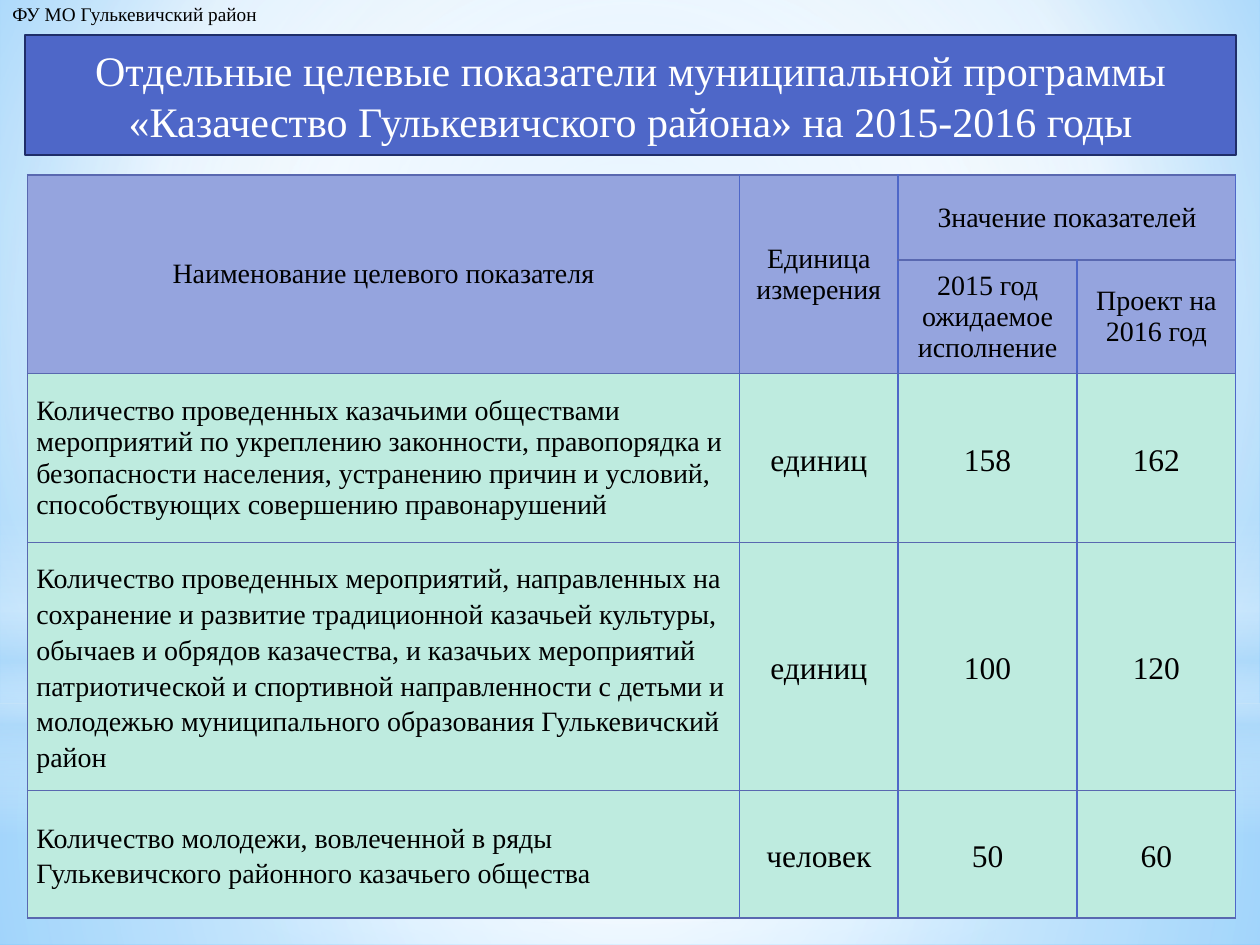
"""Build a slide with a table of target indicators of a municipal programme."""
from lxml.etree import SubElement
from pptx import Presentation
from pptx.dml.color import RGBColor
from pptx.enum.shapes import MSO_SHAPE
from pptx.enum.text import MSO_ANCHOR, MSO_AUTO_SIZE, PP_ALIGN
from pptx.oxml import parse_xml
from pptx.oxml.ns import nsdecls, qn
from pptx.util import Pt

COLORS = {"accent": "4E67C8", "outline": "1F2E69", "rule": "5968B0", "header": "95A4DE",
          "body": "BEEBDF", "black": "000000", "white": "FFFFFF", "sky": "B4DCFA",
          "pale": "9ED5FF", "deep": "5BB9FF"}
FONT = "Times New Roman"
OWNER = "ФУ МО Гулькевичский район"
TITLE = ("Отдельные целевые показатели муниципальной программы "
         "«Казачество Гулькевичского района» на 2015-2016 годы")
HEADERS = [  # row, column, last row, last column, text
    (0, 0, 1, 0, "Наименование целевого показателя"),
    (0, 1, 1, 1, "Единица\nизмерения"),
    (0, 2, 0, 3, "Значение показателей"),
    (1, 2, 1, 2, "2015 год ожидаемое исполнение"),
    (1, 3, 1, 3, "Проект на 2016 год"),
]
INDICATORS = [
    ("Количество проведенных казачьими обществами мероприятий по укреплению законности, "
     "правопорядка и безопасности населения, устранению причин и условий, "
     "способствующих совершению правонарушений", "единиц", "158", "162"),
    ("Количество проведенных мероприятий, направленных на сохранение и развитие "
     "традиционной казачьей культуры, обычаев и обрядов казачества, и казачьих мероприятий "
     "патриотической и спортивной направленности с детьми и молодежью муниципального "
     "образования Гулькевичский район", "единиц", "100", "120"),
    ("Количество молодежи, вовлеченной в ряды Гулькевичского районного казачьего общества",
     "человек", "50", "60"),
]
COLUMN_WIDTHS = [406.8, 90.7, 102.2, 90.7]
ROW_HEIGHTS = [48.6, 64.8, 96.5, 141.8, 72.7]
CENTER = (50, 50, 50, 50)
BACKDROP = [("pale", 0, 100), ("white", 60, 100), ("deep", 100, 100)]
GLOWS = [  # shape, box, stops (colour, position, opacity), focus or None for vertical
    (MSO_SHAPE.RECTANGLE, (0, 401.8, 720, 138.2),
     [("white", 0, 91), ("white", 37, 76), ("sky", 100, 79)], CENTER),
    (MSO_SHAPE.RECTANGLE, (0, 0, 720, 401.8),
     [("white", 0, 89), ("white", 48, 62), ("sky", 100, 79)], CENTER),
    (MSO_SHAPE.RECTANGLE, (0, 296.6, 720, 180),
     [("white", 0, 0), ("white", 29, 30), ("sky", 45, 40), ("white", 55, 26),
      ("sky", 65, 60), ("white", 100, 0)], None),
    (MSO_SHAPE.OVAL, (0, 126, 720, 401.8), [("white", 0, 100), ("white", 56, 0)], CENTER),
]


def rgb(name):
    return RGBColor.from_string(COLORS[name])


def write(frame, text, size=16, color="black", align=PP_ALIGN.CENTER, spacing=1.0):
    for index, line in enumerate(text.split("\n")):
        para = frame.add_paragraph() if index else frame.paragraphs[0]
        para.alignment, para.line_spacing = align, spacing
        span = para.add_run()
        span.text = line
        span.font.name, span.font.size = FONT, Pt(size)
        span.font.color.rgb = rgb(color)


def paint_gradient(owner, stops, focus):
    """Fill a shape or the slide background with a gradient."""
    fill = owner.background.fill if hasattr(owner, "background") else owner.fill
    fill.gradient()
    marks = "".join(
        f'<a:gs pos="{position * 1000}"><a:srgbClr val="{COLORS[color]}">'
        f'<a:alpha val="{opacity * 1000}"/></a:srgbClr></a:gs>'
        for color, position, opacity in stops)
    direction = '<a:lin ang="5400000" scaled="0"/>'
    if focus:
        sides = " ".join(f'{side}="{value * 1000}"' for side, value in zip("ltrb", focus))
        direction = f'<a:path path="circle"><a:fillToRect {sides}/></a:path>'
    default = owner.element.find(".//" + qn("a:gradFill"))
    default.getparent().replace(default, parse_xml(
        f'<a:gradFill rotWithShape="1" {nsdecls("a")}><a:gsLst>{marks}</a:gsLst>'
        f'{direction}</a:gradFill>'))


def format_cell(cell, fill, left_rule):
    properties = cell._tc.get_or_add_tcPr()
    edges = {"L": left_rule, "R": "accent", "T": "rule", "B": "rule"}
    for side, color in edges.items():
        line = SubElement(properties, qn(f"a:ln{side}"), w=str(Pt(1)))
        SubElement(SubElement(line, qn("a:solidFill")), qn("a:srgbClr"), val=COLORS[color])
    cell.fill.solid()
    cell.fill.fore_color.rgb = rgb(fill)
    cell.vertical_anchor = MSO_ANCHOR.MIDDLE


def add_indicator_table(page):
    table = page.shapes.add_table(
        len(ROW_HEIGHTS), len(COLUMN_WIDTHS), Pt(15.8), Pt(100.1),
        Pt(sum(COLUMN_WIDTHS)), Pt(sum(ROW_HEIGHTS))).table
    for column, width in zip(table.columns, COLUMN_WIDTHS):
        column.width = Pt(width)
    for number, (row, height) in enumerate(zip(table.rows, ROW_HEIGHTS)):
        row.height = Pt(height)
        for index, cell in enumerate(row.cells):
            format_cell(cell, "header" if number < 2 else "body",
                        "accent" if index else "rule")
    for top, left, bottom, right, text in HEADERS:
        cell = table.cell(top, left)
        if (top, left) != (bottom, right):
            cell.merge(table.cell(bottom, right))
        write(cell.text_frame, text)
    for number, indicator in enumerate(INDICATORS):
        for index, text in enumerate(indicator):
            cell = table.cell(number + 2, index)
            cell.margin_left = cell.margin_right = Pt(5)
            cell.margin_top = cell.margin_bottom = 0
            if index:
                write(cell.text_frame, text, size=18, spacing=1.15)
            else:
                write(cell.text_frame, text, align=PP_ALIGN.LEFT,
                      spacing=1.15 if number else 1.0)


def format_title(page):
    title = page.shapes.title
    title.left, title.top, title.width, title.height = Pt(14.4), Pt(20.2), Pt(692), Pt(68.4)
    title.element.spPr.append(parse_xml(
        f'<a:prstGeom prst="roundRect" {nsdecls("a")}><a:avLst/></a:prstGeom>'))
    title.fill.solid()
    title.fill.fore_color.rgb = rgb("accent")
    title.line.color.rgb = rgb("outline")
    title.line.width = Pt(1.25)
    frame = title.text_frame
    frame.word_wrap, frame.auto_size = True, MSO_AUTO_SIZE.NONE
    frame.vertical_anchor = MSO_ANCHOR.MIDDLE
    write(frame, TITLE, size=24, color="white")
    page.shapes.element.append(title.element)


def main():
    deck = Presentation()
    deck.slide_width, deck.slide_height = Pt(720), Pt(540)
    page = deck.slides.add_slide(deck.slide_layouts[5])
    paint_gradient(page, BACKDROP, (20, 10, 20, 60))
    for kind, bounds, stops, focus in GLOWS:
        glow = page.shapes.add_shape(kind, *map(Pt, bounds))
        glow.shadow.inherit = False
        glow.line.fill.background()
        paint_gradient(glow, stops, focus)
    box = page.shapes.add_textbox(0, Pt(-2.2), Pt(157), Pt(20.9))
    box.text_frame.word_wrap = False
    box.text_frame.auto_size = MSO_AUTO_SIZE.SHAPE_TO_FIT_TEXT
    write(box.text_frame, OWNER, size=11, align=PP_ALIGN.LEFT)
    add_indicator_table(page)
    format_title(page)
    deck.save("out.pptx")


if __name__ == "__main__":
    main()
